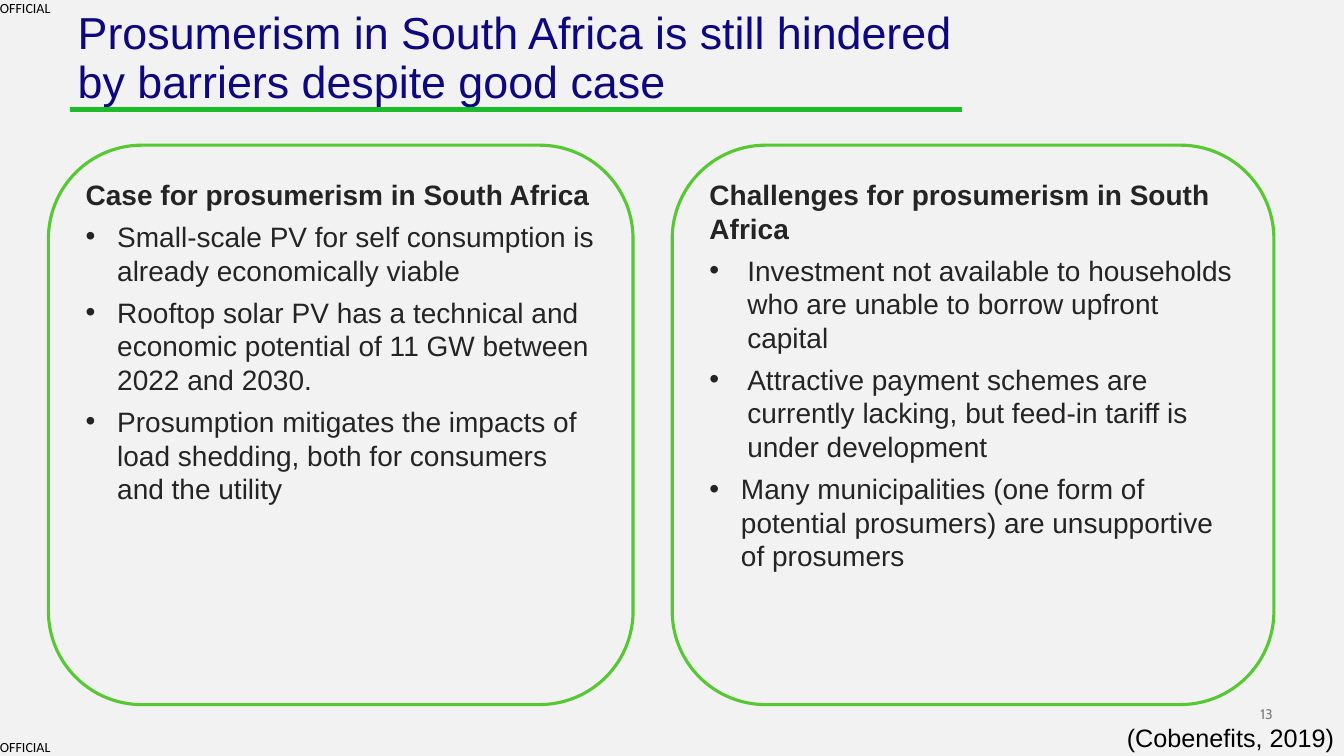
from pptx import Presentation
from pptx.dml.color import RGBColor
from pptx.enum.shapes import MSO_SHAPE
from pptx.enum.text import MSO_ANCHOR, PP_ALIGN
from pptx.util import Pt
from lxml.etree import SubElement
from pptx.oxml.ns import qn

INK = "242424"
CASE = [
    ("Small-scale PV for self consumption is already economically viable", 22.5),
    ("Rooftop solar PV has a technical and economic potential of 11 GW between 2022 and 2030.", 22.5),
    ("Prosumption mitigates the impacts of load shedding, both for consumers and the utility", 22.5),
]
CHALLENGES = [
    ("Investment not available to households who are unable to borrow upfront capital", 27),
    ("Attractive payment schemes are currently lacking, but feed-in tariff is under development", 27),
    ("Many municipalities (one form of potential prosumers) are unsupportive of prosumers", 22.5),
]


def rgb(color):
    """Turn a hex string into a colour."""
    return RGBColor.from_string(color)


def style(p, size, color, font="Arial", bold=False):
    """Format every run of a paragraph."""
    for r in p.runs:
        r.font.size = Pt(size)
        r.font.name = font
        r.font.bold = bold
        r.font.color.rgb = rgb(color)


def set_margins(tf, x, y):
    """Set equal side margins and equal top and bottom margins."""
    tf.margin_left = tf.margin_right = Pt(x)
    tf.margin_top = tf.margin_bottom = Pt(y)


def add_bullet(p, indent):
    """Give a paragraph a round bullet with a hanging indent."""
    pPr = p._p.get_or_add_pPr()
    pPr.set("marL", str(Pt(indent)))
    pPr.set("indent", str(-Pt(indent)))
    SubElement(SubElement(pPr, qn("a:buClr")), qn("a:srgbClr")).set("val", INK)
    SubElement(pPr, qn("a:buFont")).set("typeface", "Arial")
    SubElement(pPr, qn("a:buChar")).set("char", "•")


def add_label(s, box, text, size, color, font, align=PP_ALIGN.LEFT,
              anchor=MSO_ANCHOR.TOP, margins=(0, 0), wrap=True):
    """Place a single line of text in a box."""
    tf = s.shapes.add_textbox(*map(Pt, box)).text_frame
    tf.word_wrap = wrap
    tf.vertical_anchor = anchor
    set_margins(tf, *margins)
    p = tf.paragraphs[0]
    p.text = text
    p.alignment = align
    style(p, size, color, font)


def add_title(s, box, text):
    """Place the title with the green rule below it."""
    x, y, w, h = box
    rule = s.shapes.add_shape(MSO_SHAPE.RECTANGLE, Pt(x - 5), Pt(y + h - 1), Pt(w - 1.5), Pt(2.9))
    rule.shadow.inherit = False
    rule.fill.solid()
    rule.fill.fore_color.rgb = rgb("1CBC2B")
    rule.line.color.rgb = rgb("1CBC2B")
    rule.line.width = Pt(0.75)

    sp = s.shapes.title
    sp.left, sp.top, sp.width, sp.height = map(Pt, box)
    tf = sp.text_frame
    tf.text = text
    tf.word_wrap = True
    tf.vertical_anchor = MSO_ANCHOR.TOP
    set_margins(tf, 0, 0)
    p = tf.paragraphs[0]
    p.alignment = PP_ALIGN.LEFT
    p.line_spacing = 0.9
    style(p, 32, "0D0780")


def add_panel(s, box, heading, points):
    """Place a rounded panel with a bold heading and bullet points."""
    sp = s.shapes.add_shape(MSO_SHAPE.ROUNDED_RECTANGLE, *map(Pt, box))
    sp.adjustments[0] = 0.167
    sp.shadow.inherit = False
    sp.fill.background()
    sp.line.color.rgb = rgb("56C832")
    sp.line.width = Pt(2.25)
    tf = sp.text_frame
    tf.word_wrap = True
    tf.vertical_anchor = MSO_ANCHOR.TOP
    set_margins(tf, 7.2, 3.6)
    p = tf.paragraphs[0]
    p.text = heading
    p.alignment = PP_ALIGN.LEFT
    style(p, 20, INK, bold=True)
    for text, indent in points:
        p = tf.add_paragraph()
        p.text = text
        p.alignment = PP_ALIGN.LEFT
        p.space_before = Pt(6)
        add_bullet(p, indent)
        style(p, 20, INK)


def add_furniture(s, w, h):
    """Place the classification marks, slide number and source."""
    for y in (0, h - 12.2):
        add_label(s, (0, y, 38.2, 12.2), "OFFICIAL", 10, "000000", "Calibri", wrap=False)
    add_label(s, (w - 81, h - 36, 30.2, 12.2), "13", 10, "7F7F7F", "Cabin",
              PP_ALIGN.RIGHT, MSO_ANCHOR.BOTTOM)
    add_label(s, (w - 414, h - 28, 414, 29), "(Cobenefits, 2019)", 18, "000000", "Arial",
              PP_ALIGN.RIGHT, MSO_ANCHOR.MIDDLE, (7.2, 3.6))


def main():
    """Build the slide and save it."""
    prs = Presentation()
    prs.slide_width, prs.slide_height = Pt(960), Pt(540)
    s = prs.slides.add_slide(prs.slide_layouts[5])
    s.background.fill.solid()
    s.background.fill.fore_color.rgb = rgb("F2F2F2")
    add_furniture(s, 960, 540)
    add_title(s, (55.5, 8, 638, 70),
              "Prosumerism in South Africa is still hindered by barriers despite good case")
    add_panel(s, (34.6, 103.7, 417.6, 399.6), "Case for prosumerism in South Africa", CASE)
    add_panel(s, (480.2, 103.7, 429.8, 399.6), "Challenges for prosumerism in South Africa", CHALLENGES)
    prs.save("out.pptx")


if __name__ == "__main__":
    main()
